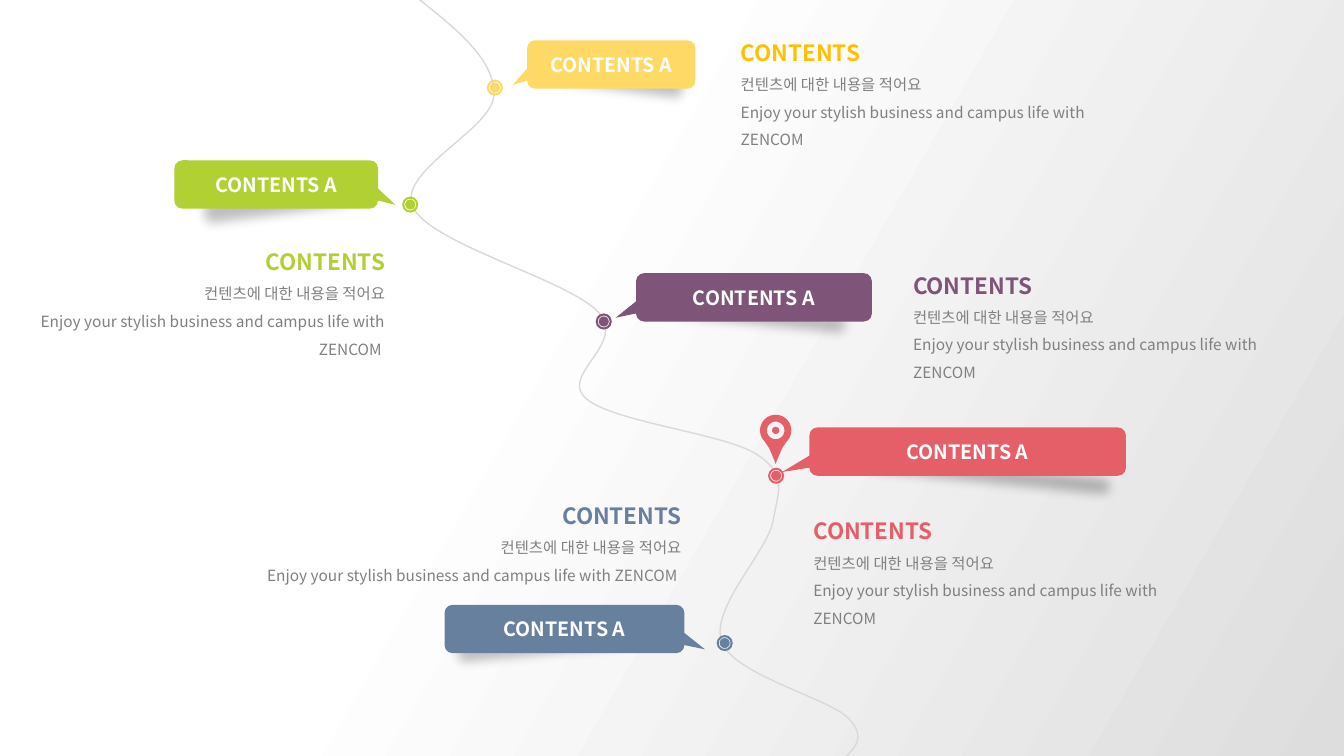
from dataclasses import dataclass
from math import cos, pi, sin

from lxml.etree import SubElement
from pptx import Presentation
from pptx.dml.color import RGBColor
from pptx.enum.shapes import MSO_SHAPE as Shape
from pptx.enum.text import MSO_ANCHOR as Anchor, PP_ALIGN as Align
from pptx.oxml.ns import qn
from pptx.util import Emu, Inches, Pt


@dataclass(frozen=True)
class Theme:
    font: str = "Noto Sans CJK KR"
    coral: str = "E55F69"
    plum: str = "7E5478"
    lime: str = "B0D034"
    slate: str = "67809E"
    yellow: str = "FFD966"
    amber: str = "FFC000"
    white: str = "FFFFFF"
    black: str = "000000"
    backdrop: str = "DDDDDE"
    road: str = "D9D9D9"
    body: str = "808080"
    label_size: int = 14
    heading_size: int = 16
    body_size: int = 11
    shadow_alpha: int = 26000
    shadow_blur: int = Pt(10)


CELL = Inches(0.1)  # the grid has 133.33 columns and 75 rows


def grid(*lengths):
    return [Emu(round(length * CELL)) for length in lengths]


def arc(x, y, radius, start, end, steps=40):
    """Points along a circle, with angles in degrees clockwise from the right."""
    angles = [(start + (end - start) * i / steps) * pi / 180 for i in range(steps + 1)]
    return [(x + radius * cos(a), y + radius * sin(a)) for a in angles]


def bezier(start, first, second, end, steps=20):
    """Points along a cubic curve, without its start."""
    points = []
    for i in range(1, steps + 1):
        t = i / steps
        weights = ((1 - t) ** 3, 3 * t * (1 - t) ** 2, 3 * t * t * (1 - t), t ** 3)
        points.append(tuple(sum(w * p[axis] for w, p in zip(weights, (start, first, second, end)))
                            for axis in (0, 1)))
    return points


class RoadmapSlide:
    def __init__(self, deck, theme):
        self.theme = theme
        self.slide = deck.slides.add_slide(deck.slide_layouts[6])
        self.shapes = self.slide.shapes

    def background(self):
        fill = self.slide.background.fill
        fill.gradient()
        fill.gradient_angle = 150
        stops = zip(fill.gradient_stops, (0, 0.61), (self.theme.backdrop, self.theme.white))
        for stop, position, color in stops:
            stop.position = position
            stop.color.rgb = RGBColor.from_string(color)

    def paint(self, shape, color):
        shape.shadow.inherit = False
        shape.fill.solid()
        shape.fill.fore_color.rgb = RGBColor.from_string(color)
        shape.line.fill.background()
        return shape

    def preset(self, kind, box, color):
        return self.paint(self.shapes.add_shape(kind, *grid(*box)), color)

    def outline(self, *contours, closed=True):
        builder = None
        for contour in contours:
            points = [tuple(grid(*point)) for point in contour]
            if builder is None:
                builder = self.shapes.build_freeform(*points[0])
            else:
                builder.move_to(*points[0])
            builder.add_line_segments(points[1:], close=closed)
        return builder.convert_to_shape()

    def road(self, start, curves):
        points = [start]
        for curve in curves:
            points += bezier(points[-1], *curve)
        road = self.outline(points, closed=False)
        road.shadow.inherit = False
        road.fill.background()
        road.line.color.rgb = RGBColor.from_string(self.theme.road)
        road.line.width = Pt(1)

    def soft_shadow(self, box, rotation):
        shadow = self.preset(Shape.RECTANGLE, box, self.theme.black)
        shadow.rotation = rotation
        properties = shadow._element.spPr
        black = properties.find(qn("a:solidFill"))[0]
        SubElement(black, qn("a:alpha"), val=str(self.theme.shadow_alpha))
        effects = properties.find(qn("a:effectLst"))
        SubElement(effects, qn("a:softEdge"), rad=str(self.theme.shadow_blur))

    def disc(self, x, y, radius, color, kind=Shape.OVAL):
        return self.preset(kind, (x - radius, y - radius, 2 * radius, 2 * radius), color)

    def milestone(self, x, y, color):
        self.disc(x, y, 0.8, color, Shape.DONUT).adjustments[0] = 0.13
        self.disc(x, y, 0.5, color)

    def callout(self, box, color, pointer):
        callout = self.preset(Shape.ROUNDED_RECTANGULAR_CALLOUT, box, color)
        for index, value in enumerate((pointer * 0.586, 0.422, 0.167)):
            callout.adjustments[index] = value
        frame = callout.text_frame
        frame.text = "CONTENTS A"
        frame.vertical_anchor = Anchor.MIDDLE
        frame.paragraphs[0].alignment = Align.CENTER
        self.style(frame.paragraphs[0], self.theme.label_size, self.theme.white, True)

    def style(self, paragraph, size, color, bold):
        for run in paragraph.runs:
            font = run.font
            font.name, font.size, font.bold = self.theme.font, Pt(size), bold
            font.color.rgb = RGBColor.from_string(color)
            SubElement(run._r.rPr, qn("a:ea"), typeface=self.theme.font)

    def description(self, left, top, width, color, align):
        frame = self.shapes.add_textbox(*grid(left, top, width, 12.7)).text_frame
        frame.word_wrap = True
        frame.vertical_anchor = Anchor.MIDDLE
        ending = " " if align == Align.RIGHT else ""
        frame.text = ("CONTENTS\n컨텐츠에 대한 내용을 적어요\n"
                      "Enjoy your stylish business and campus life with ZENCOM" + ending)
        heading, *body = frame.paragraphs
        self.style(heading, self.theme.heading_size, color, True)
        for paragraph in body:
            self.style(paragraph, self.theme.body_size, self.theme.body, False)
        for paragraph in frame.paragraphs:
            paragraph.alignment = align
            paragraph.line_spacing = 1.5

    def pin(self, x, y, color):
        right_side = [(1.05, 1.15), (0.65, 1.75), (0.35, 2.45), (0.1, 3.05)]
        left_side = [(-dx, dy) for dx, dy in reversed(right_side)]
        tail = [(x + dx, y + dy) for dx, dy in right_side + [(0, 3.35)] + left_side]
        head = arc(x, y, 1.55, 135, 405)
        self.paint(self.outline(head + tail, arc(x, y, 0.87, 360, 0)), color)
        self.disc(x, y, 0.36, color)


def main():
    theme = Theme()
    deck = Presentation()
    deck.slide_width, deck.slide_height = grid(133.33, 75)
    roadmap = RoadmapSlide(deck, theme)
    roadmap.background()

    # Winding road
    roadmap.road((41.4, -0.2), [
        ((45.3, 2.9), (49.1, 5.9), (49, 9.4)),
        ((49, 12.8), (39.2, 17), (41, 20.6)),
        ((42.7, 24.2), (56.5, 27.8), (59.4, 31)),
        ((62.2, 34.1), (55.5, 37.2), (58.1, 39.5)),
        ((60.7, 41.9), (72, 43), (75.1, 45.1)),
        ((78.2, 47.1), (77.2, 48.7), (76.7, 51.7)),
        ((76.1, 54.8), (70.4, 60.4), (71.6, 63.7)),
        ((72.8, 66.9), (81.9, 69.2), (84, 71.1)),
        ((86, 73), (84.9, 74.1), (83.8, 75.2)),
    ])

    # Stops: color, milestone, callout, pointer side, shadow, shadow rotation
    stops = [
        (theme.coral, (77, 47.2), (80.3, 42.4, 31.4, 4.8), -1, (83.9, 44.3, 28.3, 5.6), 5.7),
        (theme.plum, (59.9, 31.9), (63.1, 27.1, 23.4, 4.8), -1, (64.8, 28.6, 21.1, 5.6), 5.8),
        (theme.lime, (40.7, 20.3), (17.3, 15.9, 20.2, 4.8), 1, (18.1, 16.9, 19.1, 6.4), -7.5),
        (theme.slate, (71.9, 63.8), (44.1, 60, 23.8, 4.8), 1, (43.3, 61.3, 21.1, 5.6), -5.8),
        (theme.yellow, (49.1, 8.7), (52.3, 4, 16.7, 4.8), -1, (52.6, 4.6, 17.2, 6.4), 7.5),
    ]
    for color, milestone, callout, pointer, shadow, rotation in stops:
        roadmap.soft_shadow(shadow, rotation)
        roadmap.milestone(*milestone, color)
        roadmap.callout(callout, color, pointer)

    # Location pin above the coral stop
    roadmap.pin(76.95, 42.7, theme.coral)

    # Descriptions: left, top, width, heading color, alignment
    for description in [
        (79.7, 49.8, 36.7, theme.coral, Align.LEFT),
        (2.5, 23.1, 36.7, theme.lime, Align.RIGHT),
        (24.5, 46.9, 44.1, theme.slate, Align.RIGHT),
        (72.5, 2.3, 36.7, theme.amber, Align.LEFT),
        (89.6, 25.4, 36.7, theme.plum, Align.LEFT),
    ]:
        roadmap.description(*description)

    deck.save("out.pptx")


if __name__ == "__main__":
    main()
